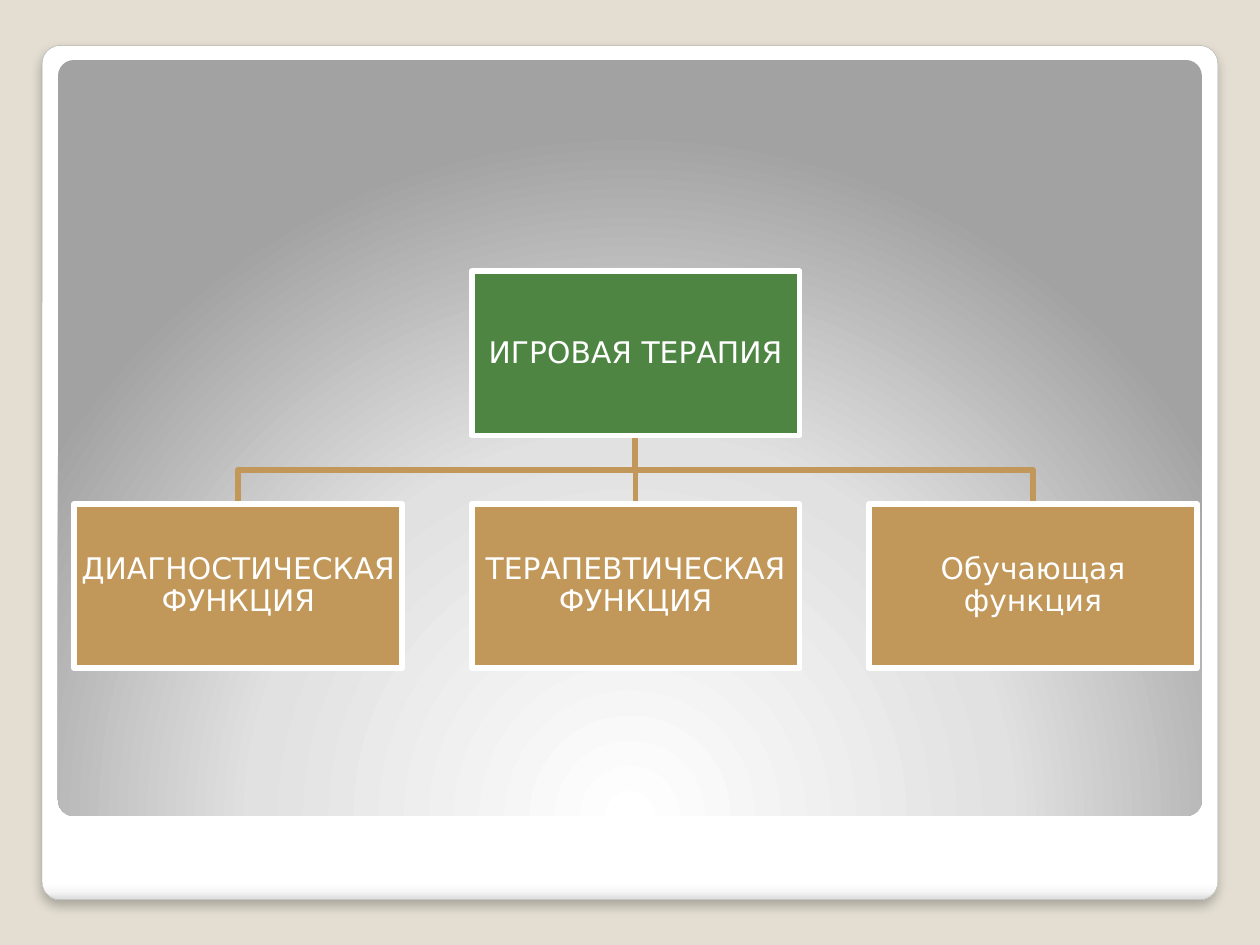
from lxml import etree
from pptx import Presentation
from pptx import util as u
from pptx.dml.color import RGBColor
from pptx.enum import shapes, text
from pptx.oxml import parse_xml
from pptx.oxml.ns import nsdecls, qn

SAND = RGBColor(0xE3, 0xDE, 0xD1)
GREY = RGBColor(0xA4, 0xA4, 0xA4)
GOLD = RGBColor(0xC1, 0x98, 0x59)
GREEN = RGBColor(0x4E, 0x85, 0x42)
WHITE = RGBColor(0xFF, 0xFF, 0xFF)

ROOT = "ИГРОВАЯ ТЕРАПИЯ"
LEAVES = ["ДИАГНОСТИЧЕСКАЯ ФУНКЦИЯ", "ТЕРАПЕВТИЧЕСКАЯ ФУНКЦИЯ", "Обучающая функция"]
STROKE = 3.35


def apply(item, values):
    for name, value in values.items():
        setattr(item, name, value)


def pen(shape, color, width):
    shape.line.color.rgb = color
    shape.line.width = u.Pt(width)


def blend(shape, stops, mode):
    """Fill with a gradient of (percent, hex) stops."""
    shape.fill.background()
    marks = "".join(
        f'<a:gs pos="{pos * 1000}"><a:srgbClr val="{color}"/></a:gs>'
        for pos, color in stops)
    grad = parse_xml(f'<a:gradFill {nsdecls("a")} rotWithShape="1">'
                     f'<a:gsLst>{marks}</a:gsLst>{mode}</a:gradFill>')
    props = shape._element.spPr
    props.replace(props.find(qn("a:noFill")), grad)


def plate(slide, left, top, width, height):
    shape = slide.shapes.add_shape(
        shapes.MSO_SHAPE.ROUNDED_RECTANGLE,
        u.Cm(left), u.Cm(top), u.Cm(width), u.Cm(height))
    shape.adjustments[0] = 0.021
    shape.shadow.inherit = False
    return shape


def frame(slide, left, top, width, height):
    # White card with a soft shadow
    card = plate(slide, left, top, width, height)
    blend(card, [(0, "FFFFFF"), (98, "FFFFFF"), (99, "F7F7F7"), (100, "DADADA")],
          '<a:lin ang="5400000" scaled="0"/>')
    pen(card, GREY, 0.16)
    glow = card._element.spPr.find(qn("a:effectLst"))
    glow.append(parse_xml(
        f'<a:outerShdw {nsdecls("a")} blurRad="{u.Pt(6)}" dist="{u.Pt(4)}" '
        'dir="5400000" algn="tl" rotWithShape="0"><a:srgbClr val="000000">'
        '<a:alpha val="25000"/></a:srgbClr></a:outerShdw>'))
    # Grey panel lit from below
    panel = plate(slide, left + 0.32, top + 0.29, width - 0.64, height - 1.98)
    blend(panel, [(0, "FFFFFF"), (55, "E1E1E1"), (100, "A2A2A2")],
          '<a:path path="circle"><a:fillToRect l="50000" t="175000" '
          'r="50000" b="-75000"/></a:path>')
    panel.line.fill.background()


def node(slide, label, color, left, top, width, height):
    box = slide.shapes.add_shape(
        shapes.MSO_SHAPE.RECTANGLE,
        u.Cm(left), u.Cm(top), u.Cm(width), u.Cm(height))
    box.shadow.inherit = False
    box.fill.solid()
    box.fill.fore_color.rgb = color
    pen(box, WHITE, STROKE)
    body = box.text_frame
    edges = ("left", "top", "right", "bottom")
    apply(body, {f"margin_{edge}": u.Cm(0.03) for edge in edges})
    apply(body, {"word_wrap": True, "vertical_anchor": text.MSO_ANCHOR.MIDDLE})
    para = body.paragraphs[0]
    para.text = label
    apply(para, {"alignment": text.PP_ALIGN.CENTER, "line_spacing": 0.9,
                 "space_after": u.Pt(6)})
    font = para.runs[0].font
    apply(font, {"name": "DejaVu Sans", "size": u.Pt(17)})
    font.color.rgb = WHITE


def link(slide, start, end):
    (x1, y1), (x2, y2) = [(u.Cm(x), u.Cm(y)) for x, y in (start, end)]
    if x1 == x2:
        line = slide.shapes.add_connector(
            shapes.MSO_CONNECTOR.STRAIGHT, x1, y1, x2, y2)
        etree.SubElement(line._element.spPr, qn("a:effectLst"))
    else:
        mid = (y1 + y2) // 2
        path = slide.shapes.build_freeform(x1, y1)
        path.add_line_segments([(x1, mid), (x2, mid), (x2, y2)], close=False)
        line = path.convert_to_shape()
        line.fill.background()
        line.shadow.inherit = False
    pen(line, GOLD, STROKE)


def tree(slide, left, top, width, height):
    wide, high = 6.61, 3.31
    step = (width - wide) / (len(LEAVES) - 1)
    mid = left + width / 2
    row = top + height - high
    spots = [left + i * step for i in range(len(LEAVES))]
    # Branches lie behind the boxes
    for x in spots:
        link(slide, (round(mid, 2), top + high), (round(x + wide / 2, 2), row))
    # Root box, then the row of leaves
    node(slide, ROOT, GREEN, mid - wide / 2, top, wide, high)
    for label, x in zip(LEAVES, spots):
        node(slide, label, GOLD, x, row, wide, high)


def main():
    deck = Presentation()
    apply(deck, {"slide_width": u.Cm(25.4), "slide_height": u.Cm(19.05)})
    slide = deck.slides.add_slide(deck.slide_layouts[6])
    back = slide.background.fill
    back.solid()
    back.fore_color.rgb = SAND
    frame(slide, 0.85, 0.92, 23.7, 17.22)
    tree(slide, 1.5, 5.47, 22.63, 8.0)
    deck.save("out.pptx")


if __name__ == "__main__":
    main()
